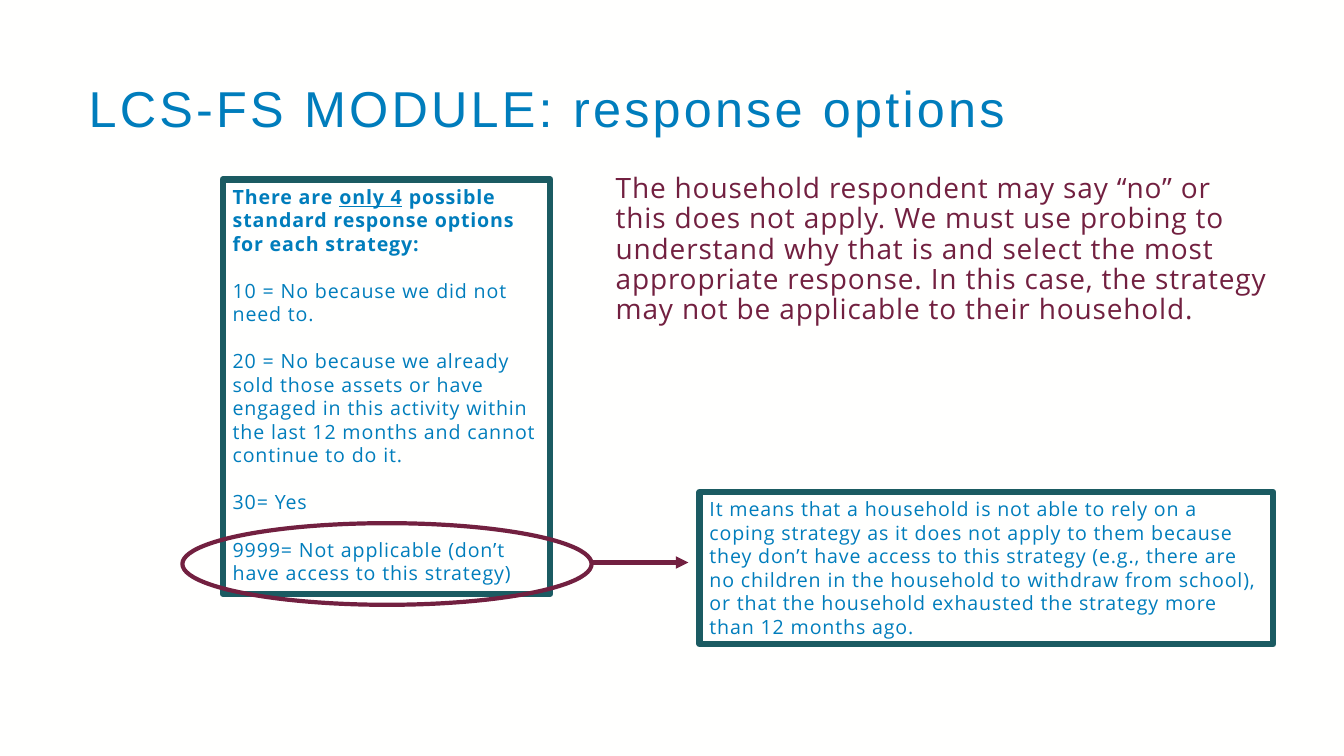
from dataclasses import dataclass
from typing import Optional

from lxml import etree
from pptx import Presentation
from pptx import util as u
from pptx.dml.color import RGBColor
from pptx.enum import shapes, text
from pptx.oxml import ns

COLOURS = {"paper": "FFFFFE", "blue": "007DBC", "teal": "1B5B62", "plum": "722040"}


@dataclass(frozen=True)
class Span:
    wording: str
    bold: bool = False
    underline: bool = False


@dataclass(frozen=True)
class Style:
    size: float
    colour: str
    font: str = "Open Sans"
    tracking: float = 0.6
    line_spacing: float = 1.0
    gap: float = 0


@dataclass(frozen=True)
class Block:
    left: float
    top: float
    width: float
    height: float
    style: Style
    paras: tuple[tuple[Span, ...], ...] = ()
    preset: Optional[shapes.MSO_SHAPE] = None
    outline: str = ""
    weight: float = 0


TITLE = Style(36, "blue", font="Arial", tracking=2.3, line_spacing=0.9)
BOXED = Style(14, "blue", gap=16.8)
REMARK = Style(20, "plum", line_spacing=0.9)
RECTANGLE = shapes.MSO_SHAPE.RECTANGLE
OVAL = shapes.MSO_SHAPE.OVAL

OPTIONS = (
    (
        Span("There are ", bold=True),
        Span("only 4", bold=True, underline=True),
        Span(" possible standard response options for each strategy:", bold=True),
    ),
    (Span("10 = No because we did not need to."),),
    (Span("20 = No because we already sold those assets or have engaged in this "
          "activity within the last 12 months and cannot continue to do it."),),
    (Span("30= Yes"),),
    (Span("9999= Not applicable (don’t have access to this strategy)"),),
)
MEANING = Span(
    "It means that a household is not able to rely on a coping strategy as it does "
    "not apply to them because they don’t have access to this strategy (e.g., there "
    "are no children in the household to withdraw from school), or that the "
    "household exhausted the strategy more than 12 months ago."
)
PROBING = Span(
    "The household respondent may say “no” or this does not apply. We must use "
    "probing to understand why that is and select the most appropriate response. "
    "In this case, the strategy may not be applicable to their household."
)

BLOCKS = (
    Block(56.2, 56.2, 870.5, 51.8, TITLE, ((Span("LCS-FS MODULE: response options"),),)),
    Block(159.1, 128.2, 234, 295.9, BOXED, OPTIONS, RECTANGLE, "teal", 4.5),
    Block(499.7, 351.4, 409.7, 108.7, BOXED, ((MEANING,),), RECTANGLE, "teal", 4.5),
    Block(130.3, 373.7, 292.3, 58.3, BOXED, (), OVAL, "plum", 3),
    Block(432.7, 121, 480.2, 148.3, REMARK, ((PROBING,),)),
)


def colour(name: str) -> RGBColor:
    return RGBColor.from_string(COLOURS[name])


def set_all(target, values: dict) -> None:
    for name, value in values.items():
        setattr(target, name, value)


def write_text(frame, block: Block) -> None:
    style = block.style
    set_all(frame, {
        "word_wrap": True,
        "auto_size": text.MSO_AUTO_SIZE.NONE,
        "vertical_anchor": text.MSO_ANCHOR.TOP,
    })
    for index, spans in enumerate(block.paras):
        para = frame.add_paragraph() if index else frame.paragraphs[0]
        set_all(para, {
            "alignment": text.PP_ALIGN.LEFT,
            "line_spacing": style.line_spacing,
            "space_before": u.Pt(style.gap if index else 0),
        })
        for item in spans:
            span = para.add_run()
            span.text = item.wording
            set_all(span.font, {
                "name": style.font,
                "size": u.Pt(style.size),
                "bold": item.bold,
                "underline": item.underline,
            })
            span.font.color.rgb = colour(style.colour)
            span.font._element.set("spc", str(round(style.tracking * 100)))


def draw_block(page, block: Block) -> None:
    place = [u.Pt(n) for n in (block.left, block.top, block.width, block.height)]
    if block.preset is None:
        box = page.shapes.add_textbox(*place)
    else:
        box = page.shapes.add_shape(block.preset, *place)
        box.shadow.inherit = False
        box.fill.background()
        box.line.color.rgb = colour(block.outline)
        box.line.width = u.Pt(block.weight)
        etree.SubElement(box.line._ln, ns.qn("a:round"))
    if block.paras:
        write_text(box.text_frame, block)


def draw_arrow(page, left: float, right: float, level: float) -> None:
    arrow = page.shapes.add_connector(
        shapes.MSO_CONNECTOR.STRAIGHT, u.Pt(left), u.Pt(level), u.Pt(right), u.Pt(level)
    )
    arrow.line.color.rgb = colour("plum")
    arrow.line.width = u.Pt(3)
    etree.SubElement(arrow.line._ln, ns.qn("a:tailEnd"), type="triangle")
    etree.SubElement(arrow._element.spPr, ns.qn("a:effectLst"))


def main() -> None:
    deck = Presentation()
    set_all(deck, {"slide_width": u.Pt(960), "slide_height": u.Pt(540)})
    page = deck.slides.add_slide(deck.slide_layouts[6])
    page.background.fill.solid()
    page.background.fill.fore_color.rgb = colour("paper")

    # Title, response options, explanation, highlight and remark
    for block in BLOCKS:
        draw_block(page, block)

    # Arrow from the highlighted option to its explanation
    draw_arrow(page, 422.6, 491.8, 401.8)

    deck.save("out.pptx")


if __name__ == "__main__":
    main()
